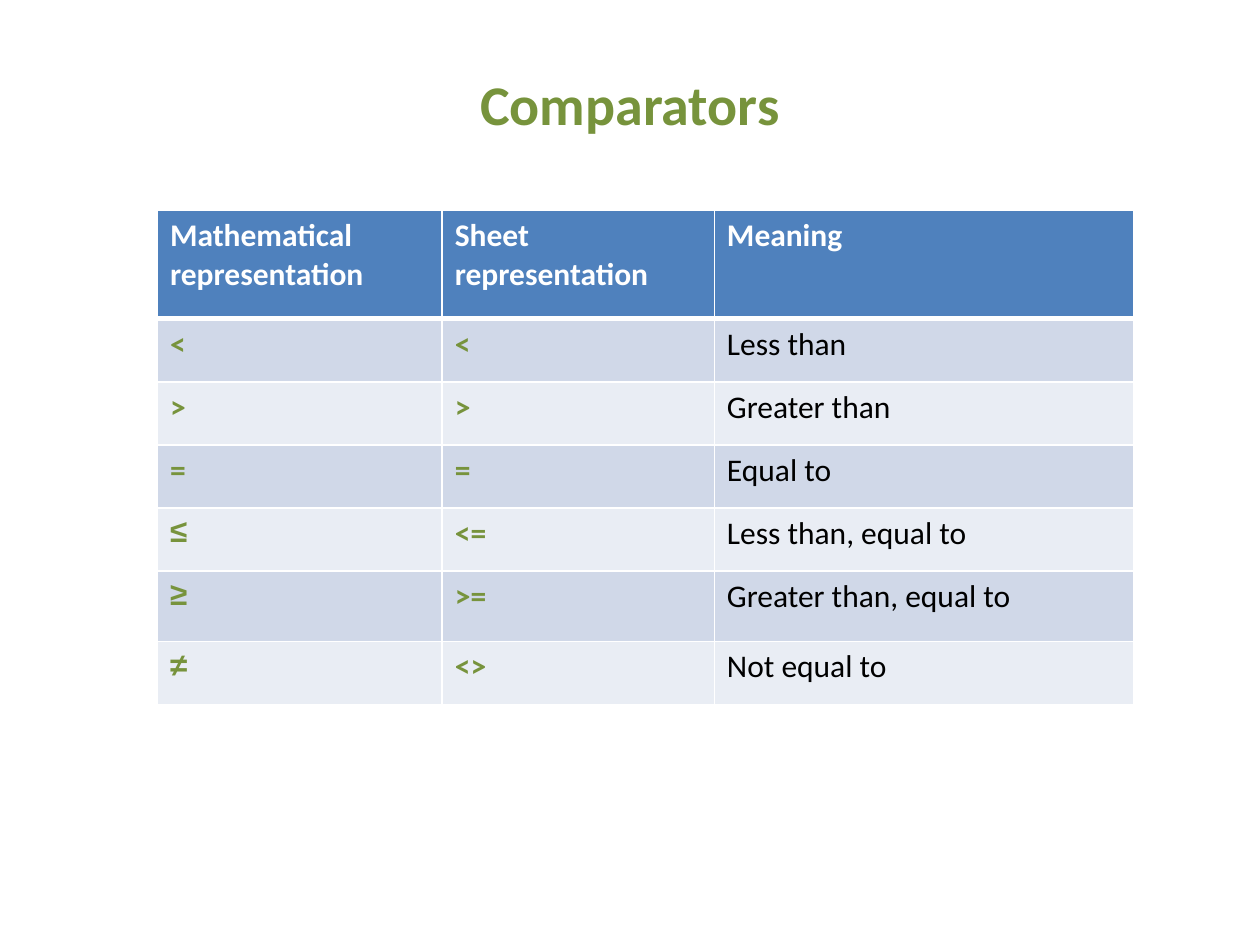
from lxml.etree import SubElement
from pptx import Presentation
from pptx.dml.color import RGBColor as RGB
from pptx.enum.text import MSO_ANCHOR as ANCHOR, PP_ALIGN as ALIGN
from pptx.oxml.ns import qn
from pptx.util import Inches, Pt

TITLE = "Comparators"
HEADER = ("Mathematical representation", "Sheet representation", "Meaning")
ROWS = [
    ("<", "<", "Less than"),
    (">", ">", "Greater than"),
    ("=", "=", "Equal to"),
    ("≤", "<=", "Less than, equal to"),
    ("≥", ">=", "Greater than, equal to"),
    ("≠", "<>", "Not equal to"),
]
COLORS = {
    "green": "77933C", "header": "4F81BD", "odd": "D0D8E8",
    "even": "E9EDF4", "white": "FFFFFF", "black": "000000",
}
COL_WIDTHS = (2.26, 2.16, 3.33)
ROW_HEIGHTS = (0.86, 0.5, 0.5, 0.5, 0.5, 0.56, 0.5)
LEFT, TOP = 1.25, 1.67


def color(name):
    return RGB.from_string(COLORS[name])


def style_font(font, size, name, bold, face="Calibri"):
    font.size, font.bold, font.name = Pt(size), bold, face
    font.color.rgb = color(name)


def add_borders(cell, widths):
    tcPr = cell._tc.get_or_add_tcPr()
    for side, width in widths.items():
        ln = SubElement(tcPr, qn(f"a:ln{side}"), w=str(Pt(width)))
        fill = SubElement(ln, qn("a:solidFill"))
        SubElement(fill, qn("a:srgbClr"), val=COLORS["white"])


def add_title(slide):
    box = slide.shapes.add_textbox(Inches(0.5), Inches(0.3), Inches(9), Inches(1.03))
    tf = box.text_frame
    tf.word_wrap = True
    tf.vertical_anchor = ANCHOR.MIDDLE
    p = tf.paragraphs[0]
    p.text, p.alignment = TITLE, ALIGN.CENTER
    style_font(p.font, 32, "green", True)


def fill_cell(cell, text, row, col):
    header = row == 0
    add_borders(cell, {
        "L": 1, "R": 1, "T": 3 if row == 1 else 1, "B": 3 if header else 1,
    })
    cell.fill.solid()
    cell.fill.fore_color.rgb = color("header" if header else "odd" if row % 2 else "even")
    p = cell.text_frame.paragraphs[0]
    p.text = text
    meaning = col == len(HEADER) - 1
    ink = "white" if header else "black" if meaning else "green"
    face = "Arial" if text in ("≤", "≥", "≠") else "Calibri"
    style_font(p.font, 18, ink, header or not meaning, face)


def add_comparators(slide):
    table = slide.shapes.add_table(
        len(ROW_HEIGHTS), len(COL_WIDTHS), Inches(LEFT), Inches(TOP),
        Inches(sum(COL_WIDTHS)), Inches(sum(ROW_HEIGHTS)),
    ).table
    for column, width in zip(table.columns, COL_WIDTHS):
        column.width = Inches(width)
    for row, height in zip(table.rows, ROW_HEIGHTS):
        row.height = Inches(height)
    for i, texts in enumerate([HEADER, *ROWS]):
        for j, text in enumerate(texts):
            fill_cell(table.cell(i, j), text, i, j)


def main():
    prs = Presentation()
    prs.slide_width, prs.slide_height = Inches(10), Inches(7.5)
    slide = prs.slides.add_slide(prs.slide_layouts[6])
    add_title(slide)
    add_comparators(slide)
    prs.save("out.pptx")


if __name__ == "__main__":
    main()
